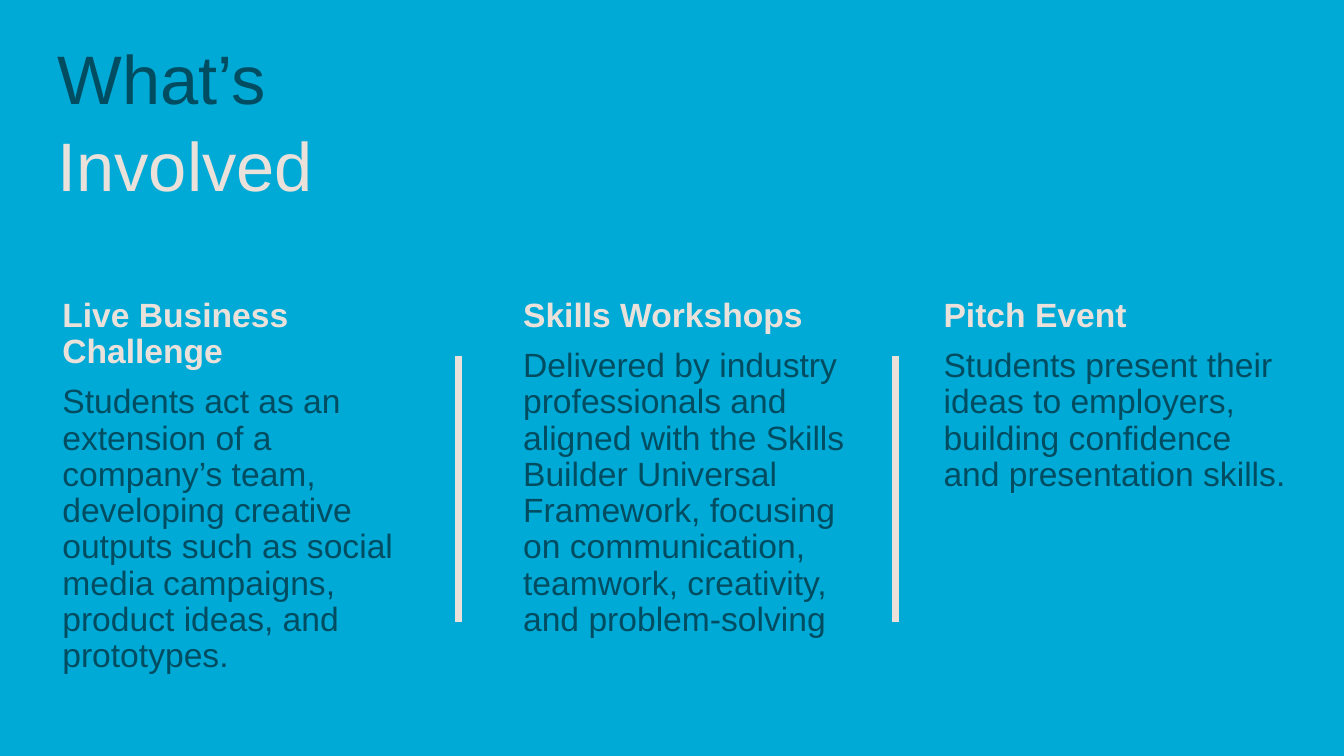
from dataclasses import dataclass

from lxml import etree
from pptx import Presentation
from pptx.dml.color import RGBColor
from pptx.enum.shapes import MSO_CONNECTOR
from pptx.enum.text import MSO_ANCHOR, PP_ALIGN
from pptx.oxml.ns import qn
from pptx.util import Inches, Pt

STRAIGHT = MSO_CONNECTOR.STRAIGHT
TOP = MSO_ANCHOR.TOP
LEFT = PP_ALIGN.LEFT
TITLE_ONLY = 5


@dataclass(frozen=True)
class Theme:
    background: RGBColor = RGBColor.from_string("00AAD7")
    dark: RGBColor = RGBColor.from_string("004D62")
    light: RGBColor = RGBColor.from_string("EAE1DA")
    font: str = "Arial"
    title_size: int = 49
    body_size: int = 24
    divider_width: int = 5


THEME = Theme()

COLUMN_TOP, COLUMN_WIDTH = 2.91, 3.61
COLUMNS = [
    (0.52, 3.88, "Live Business Challenge",
     "Students act as an extension of a company’s team, developing creative "
     "outputs such as social media campaigns, product ideas, and prototypes."),
    (5.09, 3.45, "Skills Workshops",
     "Delivered by industry professionals and aligned with the Skills Builder "
     "Universal Framework, focusing on communication, teamwork, creativity, "
     "and problem-solving"),
    (9.26, 2.64, "Pitch Event",
     "Students present their ideas to employers, building confidence and "
     "presentation skills."),
]
DIVIDER_LEFTS = (4.55, 8.88)
DIVIDER_TOP, DIVIDER_HEIGHT = 3.53, 2.64


def add_run(p, text, size, color, bold=False):
    r = p.add_run()
    r.text = text
    r.font.name = THEME.font
    r.font.size = Pt(size)
    r.font.bold = bold
    r.font.color.rgb = color


def add_title(slide, left, top, width, height):
    sp = slide.shapes.title
    sp.left, sp.top = Inches(left), Inches(top)
    sp.width, sp.height = Inches(width), Inches(height)
    tf = sp.text_frame
    tf.word_wrap = True
    tf.vertical_anchor = TOP
    p = tf.paragraphs[0]
    p.alignment = LEFT
    p.line_spacing = 1.05
    add_run(p, "What’s", THEME.title_size, THEME.dark)
    p.add_line_break()
    add_run(p, "Involved", THEME.title_size, THEME.light)


def add_column(slide, left, top, width, height, heading, body):
    sp = slide.shapes.add_textbox(Inches(left), Inches(top),
                                  Inches(width), Inches(height))
    tf = sp.text_frame
    tf.word_wrap = True
    p = tf.paragraphs[0]
    p.line_spacing = 0.9
    add_run(p, heading, THEME.body_size, THEME.light, bold=True)
    p = tf.add_paragraph()
    p.line_spacing = 0.9
    p.space_before = Pt(10)
    add_run(p, body, THEME.body_size, THEME.dark)


def add_divider(slide, left, top, height):
    line = slide.shapes.add_connector(STRAIGHT, Inches(left), Inches(top),
                                      Inches(left), Inches(top + height))
    line.line.color.rgb = THEME.light
    line.line.width = Pt(THEME.divider_width)
    etree.SubElement(line._element.spPr, qn("a:effectLst"))


def main():
    prs = Presentation()
    prs.slide_width, prs.slide_height = Inches(13.33), Inches(7.5)
    slide = prs.slides.add_slide(prs.slide_layouts[TITLE_ONLY])
    fill = slide.background.fill
    fill.solid()
    fill.fore_color.rgb = THEME.background

    add_title(slide, 0.47, 0.27, 12.25, 1.75)
    for left, height, heading, body in COLUMNS:
        add_column(slide, left, COLUMN_TOP, COLUMN_WIDTH, height, heading, body)
    for left in DIVIDER_LEFTS:
        add_divider(slide, left, DIVIDER_TOP, DIVIDER_HEIGHT)

    prs.save("out.pptx")


if __name__ == "__main__":
    main()
